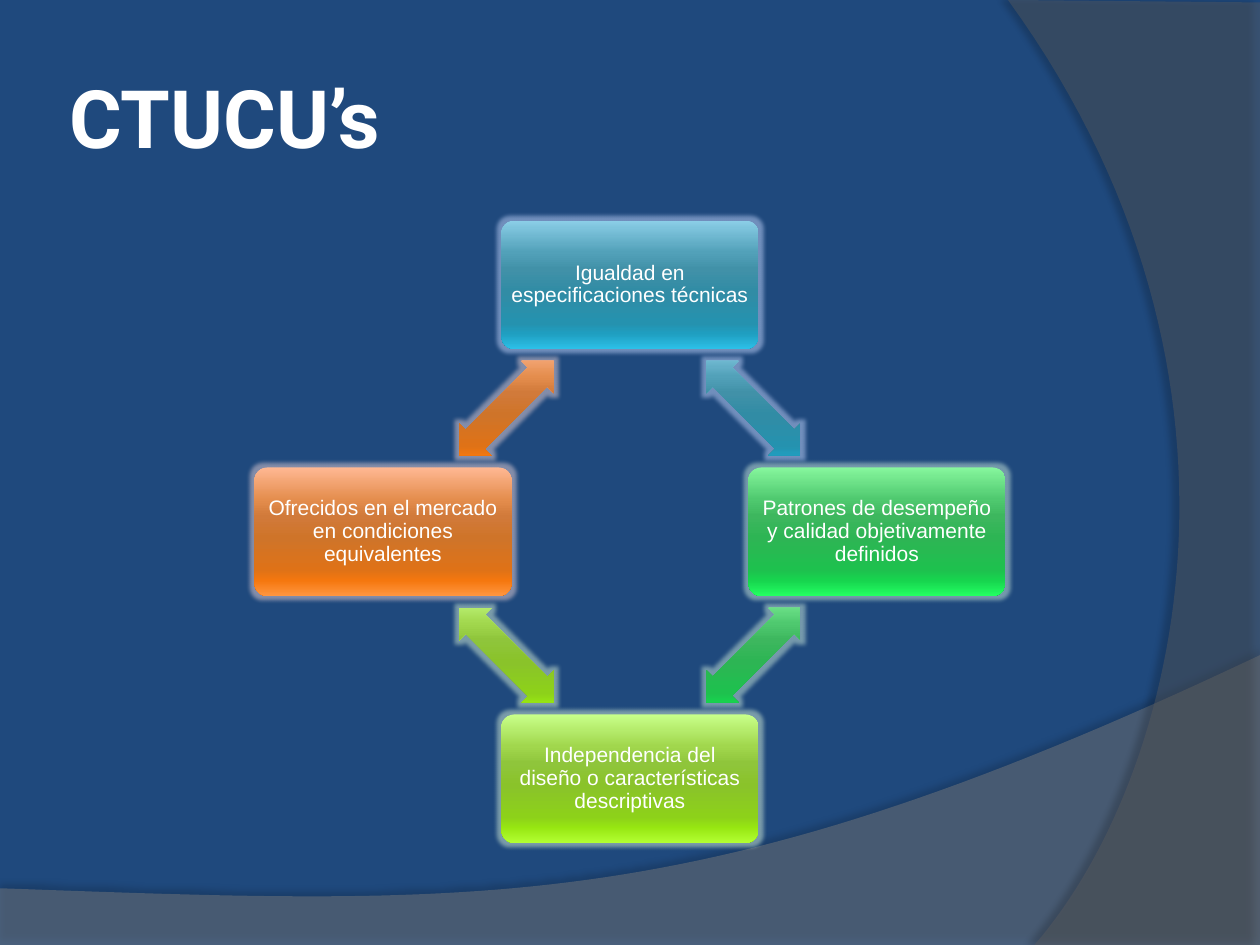
"""Build a slide with a four-step cycle of technical specification criteria."""
import math
from dataclasses import dataclass

from lxml import etree
from pptx import Presentation
from pptx import util as u
from pptx.dml.color import RGBColor
from pptx.enum import shapes, text
from pptx.oxml import ns


@dataclass(frozen=True)
class Theme:
    background: str = "1F497D"
    white: str = "FFFFFF"
    lower_wave: str = "7F7F7F"
    right_wave: str = "5E5E5E"
    shadow: str = "000000"
    title_font: str = "Roboto"
    body_font: str = "Arial"
    title_size: int = 46
    body_size: int = 12
    stops: tuple = (0, 25, 38, 55, 80, 88, 100)
    blue: tuple = ("8BCEE7", "52A1B9", "4191A8", "318CA5", "2592AF", "1F9EC0", "2CC0E8")
    green: tuple = ("86F69D", "4FC96F", "3DB75E", "2DB554", "1EC14E", "17D44E", "23FF62")
    lime: tuple = ("C8FF89", "A1D74D", "8FC53B", "8AC32A", "8DD11A", "97E611", "B2FF32")
    orange: tuple = ("FFB893", "E48D4D", "D17A3A", "CF7429", "DF7217", "F5770E", "FF9640")
    blue_glow: str = "A9BFE8"
    green_glow: str = "B0D0CC"
    lime_glow: str = "B8D4C8"
    orange_glow: str = "C8BCC8"


def add_color(parent, color, alpha=100):
    node = etree.SubElement(parent, ns.qn("a:srgbClr"), val=color)
    if alpha < 100:
        etree.SubElement(node, ns.qn("a:alpha"), val=str(alpha * 1000))


def style_shape(shape, colors, glow):
    shape.shadow.inherit = False
    shape.line.fill.background()
    shape.fill.gradient()
    shape.fill.gradient_angle = 270
    properties = shape._element.spPr
    gradient = properties.find(ns.qn("a:gradFill"))
    gradient.set("rotWithShape", "0")
    stop_list = gradient.find(ns.qn("a:gsLst"))
    for old_stop in list(stop_list):
        stop_list.remove(old_stop)
    for position, color in zip(theme.stops, colors):
        stop = etree.SubElement(stop_list, ns.qn("a:gs"), pos=str(position * 1000))
        add_color(stop, color)
    effects = properties.find(ns.qn("a:effectLst"))
    add_color(etree.SubElement(effects, ns.qn("a:glow"), rad=str(u.Pt(5))), glow, 60)


theme = Theme()
deck = Presentation()
deck.slide_width, deck.slide_height = u.Inches(10), u.Inches(7.5)
page = deck.slides.add_slide(deck.slide_layouts[5])
page.background.fill.solid()
page.background.fill.fore_color.rgb = RGBColor.from_string(theme.background)

# fill, opacity, shadow opacity, shadow distance, shadow angle, corners, curve
waves = [
    (theme.lower_wave, 45, 35, 3.5, 270, [(0, 7.5), (10, 7.5)],
     [(10, 5.2), (5.59, 7.29), (3.91, 7.19), (0, 7.05)]),
    (theme.right_wave, 40, 45, 4, 180, [(10, 0.02), (10, 7.5)],
     [(8.21, 7.5), (9.35, 6.19), (10.18, 3), (8, 0)]),
]
curve_steps = 60
for color, opacity, shade, distance, angle, corners, curve in waves:
    points = list(corners)
    for step in range(curve_steps + 1):
        t = step / curve_steps
        weights = [math.comb(3, k) * t**k * (1 - t) ** (3 - k) for k in range(4)]
        points.append(tuple(sum(w * p[axis] for w, p in zip(weights, curve)) for axis in (0, 1)))
    points = [(u.Inches(x), u.Inches(y)) for x, y in points]
    builder = page.shapes.build_freeform(*points[0])
    builder.add_line_segments(points[1:], close=True)
    wave = builder.convert_to_shape()
    wave.shadow.inherit = False
    wave.line.fill.background()
    wave.fill.solid()
    wave.fill.fore_color.rgb = RGBColor.from_string(color)
    properties = wave._element.spPr
    fill_color = properties.find(ns.qn("a:solidFill"))[0]
    etree.SubElement(fill_color, ns.qn("a:alpha"), val=str(opacity * 1000))
    shadow = etree.SubElement(
        properties.find(ns.qn("a:effectLst")), ns.qn("a:outerShdw"),
        blurRad=str(u.Pt(4)), dist=str(u.Pt(distance)), dir=str(angle * 60000))
    add_color(shadow, theme.shadow, shade)

title = page.shapes.title
page.shapes._spTree.append(title._element)
title.left, title.top = u.Inches(0.5), u.Inches(0.3)
title.width, title.height = u.Inches(8.17), u.Inches(1.25)
frame = title.text_frame
frame.margin_left = frame.margin_right = u.Inches(0.05)
frame.vertical_anchor = text.MSO_ANCHOR.MIDDLE
para = frame.paragraphs[0]
para.alignment = text.PP_ALIGN.LEFT
span = para.add_run()
span.text = "CTUCU’s"
span.font.name, span.font.size, span.font.bold = theme.title_font, u.Pt(theme.title_size), True
span.font.color.rgb = RGBColor.from_string(theme.white)

criteria = [
    ("Igualdad en especificaciones técnicas", theme.blue, theme.blue_glow),
    ("Patrones de desempeño y calidad objetivamente definidos", theme.green, theme.green_glow),
    ("Independencia del diseño o características descriptivas", theme.lime, theme.lime_glow),
    ("Ofrecidos en el mercado en condiciones equivalentes", theme.orange, theme.orange_glow),
]
center_x, center_y, radius = 5, 4.22, 1.96
box_width, box_height = 2.04, 1.02
arrow_width, arrow_height = 1.06, 0.36
for index, (wording, colors, glow) in enumerate(criteria):
    turn = math.radians(90 * index)
    x = center_x + radius * math.sin(turn)
    y = center_y - radius * math.cos(turn)
    box = page.shapes.add_shape(
        shapes.MSO_SHAPE.ROUNDED_RECTANGLE,
        u.Inches(x - box_width / 2), u.Inches(y - box_height / 2),
        u.Inches(box_width), u.Inches(box_height))
    box.adjustments[0] = 0.1
    style_shape(box, colors, glow)
    frame = box.text_frame
    frame.word_wrap = True
    frame.vertical_anchor = text.MSO_ANCHOR.MIDDLE
    frame.margin_left = frame.margin_right = u.Inches(0.05)
    frame.margin_top = frame.margin_bottom = u.Inches(0.05)
    para = frame.paragraphs[0]
    para.alignment = text.PP_ALIGN.CENTER
    para.line_spacing = 0.9
    span = para.add_run()
    span.text = wording
    span.font.name, span.font.size = theme.body_font, u.Pt(theme.body_size)
    span.font.color.rgb = RGBColor.from_string(theme.white)

    turn += math.radians(45)
    x = center_x + radius / math.sqrt(2) * math.sin(turn)
    y = center_y - radius / math.sqrt(2) * math.cos(turn)
    arrow = page.shapes.add_shape(
        shapes.MSO_SHAPE.LEFT_RIGHT_ARROW,
        u.Inches(x - arrow_width / 2), u.Inches(y - arrow_height / 2),
        u.Inches(arrow_width), u.Inches(arrow_height))
    arrow.adjustments[0], arrow.adjustments[1] = 0.6, 0.5
    arrow.rotation = 45 + 90 * index
    style_shape(arrow, colors, glow)

deck.save("out.pptx")
